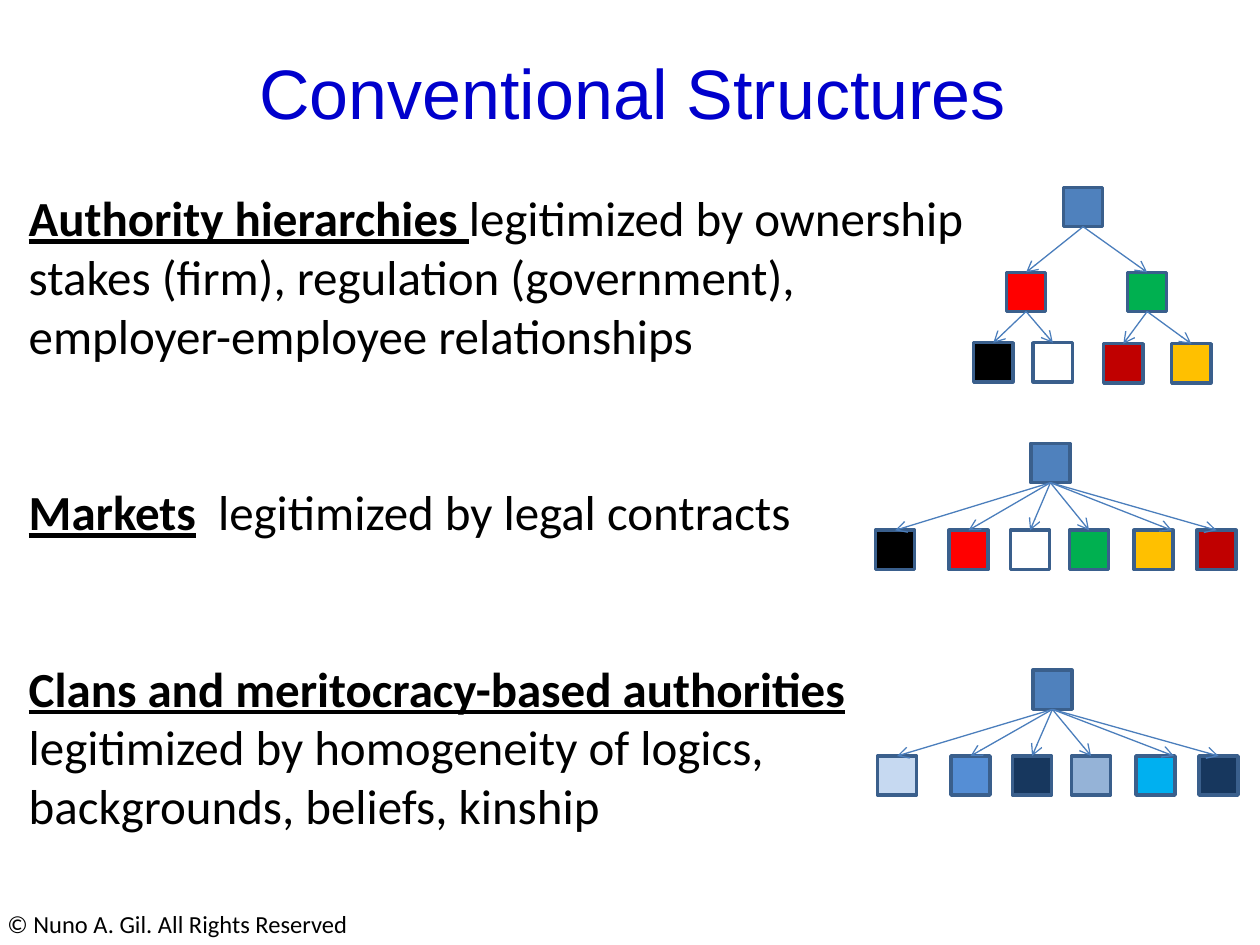
from dataclasses import dataclass

import pptx
import pptx.dml.color
import pptx.enum.shapes
import pptx.enum.text
import pptx.oxml.ns
import pptx.util
from lxml import etree
from pptx.util import Cm

SIDE = 0.79
ROOT_FILL = "4F81BD"


@dataclass
class Node:
    """Square with its top left corner in cm; tip_dx shifts the arrow that reaches it."""
    x: float
    y: float
    fill: str
    children: tuple["Node", ...] = ()
    tip_dx: float = 0


@dataclass
class Statement:
    term: str
    rest: str


STATEMENTS = (
    Statement("Authority hierarchies ",
              "legitimized by ownership stakes (firm), regulation (government), "
              "employer-employee relationships"),
    Statement("Markets", "  legitimized by legal contracts"),
    Statement("Clans and meritocracy-based authorities ",
              "legitimized by homogeneity of logics, backgrounds, beliefs, kinship"),
)

HIERARCHY = Node(21.44, 3.78, ROOT_FILL, (
    Node(20.29, 5.49, "FF0000", (Node(19.63, 6.91, "000000"), Node(20.83, 6.91, "FFFFFF"))),
    Node(22.73, 5.49, "00B050", (Node(22.25, 6.93, "C00000"), Node(23.62, 6.93, "FFC000"))),
))

FAN_XS = (17.65, 19.13, 20.37, 21.56, 22.86, 24.13)
FAN_TIPS = (0, 0, 0, 0, 0.37, 0)


def fan(dx: float, root_y: float, leaf_y: float, fills: tuple[str, ...]) -> Node:
    """One root above a row of six leaves."""
    leaves = tuple(Node(x + dx, leaf_y, fill, tip_dx=tip)
                   for x, fill, tip in zip(FAN_XS, fills, FAN_TIPS))
    return Node(20.78 + dx, root_y, ROOT_FILL, leaves)


MARKET = fan(0, 8.94, 10.69, ("000000", "FF0000", "FFFFFF", "00B050", "FFC000", "C00000"))
CLAN = fan(0.04, 13.51, 15.24, ("C6D9F1", "558ED5", "17375E", "95B3D7", "00B0F0", "17375E"))


def rgb(value: str) -> pptx.dml.color.RGBColor:
    return pptx.dml.color.RGBColor.from_string(value)


def set_font(font, name: str, size: float, color: str) -> None:
    font.name = name
    font.size = pptx.util.Pt(size)
    font.color.rgb = rgb(color)


def add_text_frame(s, x: float, y: float, w: float, h: float):
    tf = s.shapes.add_textbox(Cm(x), Cm(y), Cm(w), Cm(h)).text_frame
    tf.word_wrap = True
    return tf


def add_arrow(s, x1: float, y1: float, x2: float, y2: float) -> None:
    c = s.shapes.add_connector(pptx.enum.shapes.MSO_CONNECTOR.STRAIGHT,
                               Cm(x1), Cm(y1), Cm(x2), Cm(y2))
    c.line.color.rgb = rgb("4B7EBC")
    c.line.width = pptx.util.Pt(0.75)
    qn = pptx.oxml.ns.qn
    etree.SubElement(c.line._get_or_add_ln(), qn("a:tailEnd"), type="arrow")
    etree.SubElement(c._element.spPr, qn("a:effectLst"))


def add_tree(s, node: Node) -> None:
    """Draw a node, then its subtrees and the arrows leading to them."""
    sp = s.shapes.add_shape(pptx.enum.shapes.MSO_SHAPE.RECTANGLE,
                            Cm(node.x), Cm(node.y), Cm(SIDE), Cm(SIDE))
    sp.shadow.inherit = False
    sp.fill.solid()
    sp.fill.fore_color.rgb = rgb(node.fill)
    sp.line.color.rgb = rgb("3A5F8C")
    sp.line.width = pptx.util.Pt(2)
    for child in node.children:
        add_tree(s, child)
        add_arrow(s, node.x + SIDE / 2, node.y + SIDE,
                  child.x + SIDE / 2 + child.tip_dx, child.y)


def add_statements(s) -> None:
    tf = add_text_frame(s, 0.33, 3.66, 19.61, 13.3)
    for i, statement in enumerate(STATEMENTS):
        p = tf.add_paragraph() if i else tf.paragraphs[0]
        set_font(p.font, "Calibri", 28, "000000")
        p.line_spacing = pptx.util.Pt(33.6)
        p.space_before = pptx.util.Pt(67.2 if i else 0)
        r = p.add_run()
        r.text = statement.term
        r.font.bold = r.font.underline = True
        p.add_run().text = statement.rest


def main() -> None:
    prs = pptx.Presentation()
    prs.slide_width, prs.slide_height = Cm(25.4), Cm(19.05)
    s = prs.slides.add_slide(prs.slide_layouts[6])

    add_statements(s)

    tf = add_text_frame(s, 0.05, 0.91, 25.4, 1.88)
    tf.vertical_anchor = pptx.enum.text.MSO_ANCHOR.MIDDLE
    p = tf.paragraphs[0]
    p.text = "Conventional Structures"
    p.alignment = pptx.enum.text.PP_ALIGN.CENTER
    set_font(p.font, "Arial", 40, "0000CC")

    p = add_text_frame(s, -0.1, 18.21, 25.5, 0.86).paragraphs[0]
    p.text = "© Nuno A. Gil. All Rights Reserved"
    set_font(p.font, "Calibri", 14, "000000")

    for tree in (HIERARCHY, MARKET, CLAN):
        add_tree(s, tree)
    prs.save("out.pptx")


if __name__ == "__main__":
    main()
